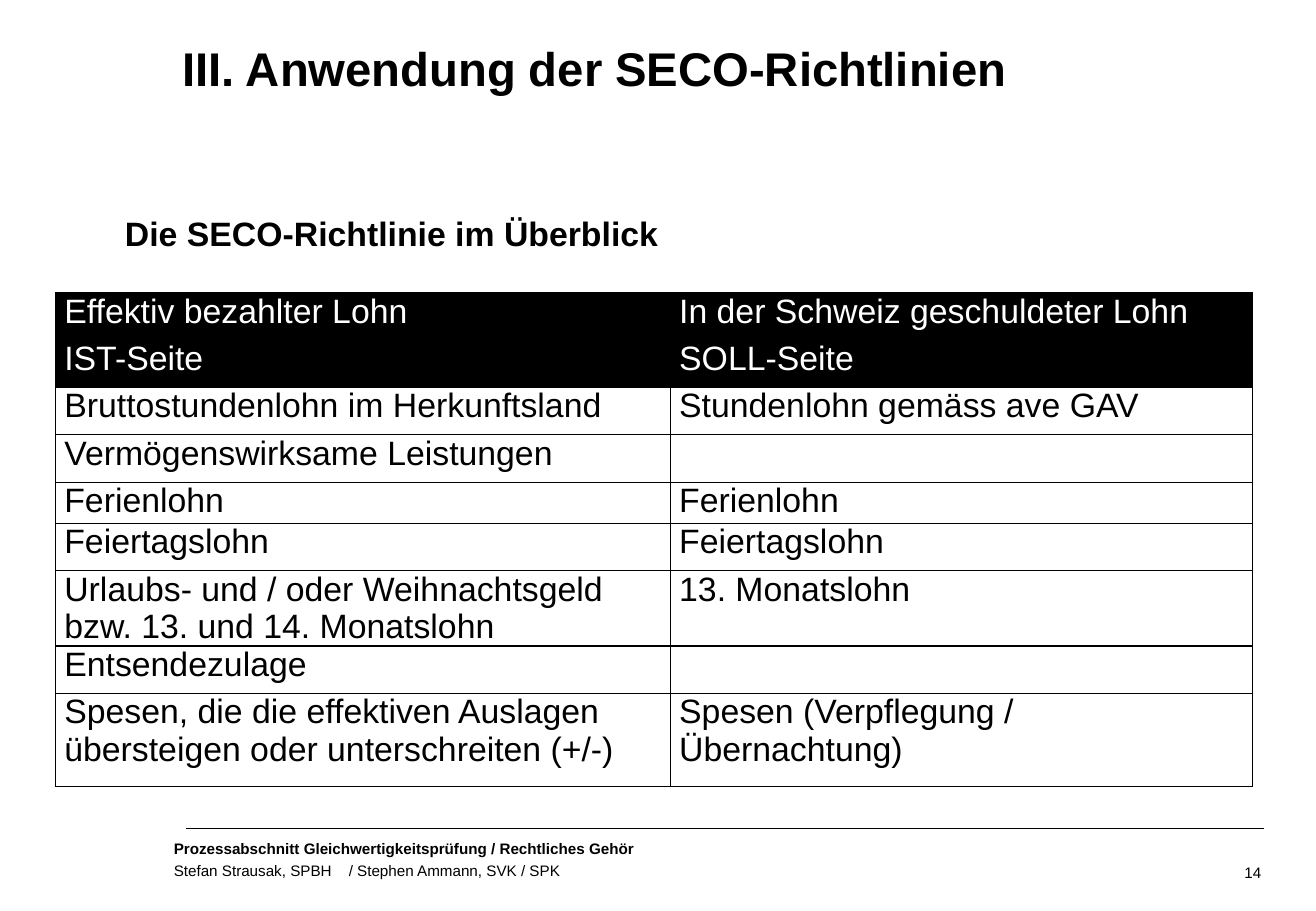
from lxml import etree
from pptx import Presentation
from pptx.dml.color import RGBColor
from pptx.enum.shapes import MSO_CONNECTOR as LINE
from pptx.enum.text import MSO_ANCHOR as ANCHOR, MSO_AUTO_SIZE as AUTO, PP_ALIGN as ALIGN
from pptx.oxml import parse_xml
from pptx.oxml.ns import nsdecls, qn
from pptx.util import Inches, Pt

INK = {"black": "000000", "white": "FFFFFF"}


def write(para, text, size, color="black", bold=False):
    """Put one formatted run into a paragraph."""
    run = para.add_run()
    run.text = text
    look = {"name": "Arial", "size": Pt(size), "bold": bold}
    for key, value in look.items():
        setattr(run.font, key, value)
    run.font.color.rgb = RGBColor.from_string(INK[color])


def setup(shape, left, top, width, height, inset=0.09):
    """Place a text shape and return its frame."""
    shape.left, shape.top = Inches(left), Inches(top)
    shape.width, shape.height = Inches(width), Inches(height)
    frame = shape.text_frame
    look = {
        "word_wrap": True, "auto_size": AUTO.NONE, "vertical_anchor": ANCHOR.TOP,
        "margin_left": Inches(inset), "margin_right": Inches(inset),
        "margin_top": Inches(0.05), "margin_bottom": Inches(0.05),
    }
    for key, value in look.items():
        setattr(frame, key, value)
    return frame


deck = Presentation()
deck.slide_width, deck.slide_height = Inches(10.83), Inches(7.5)
slide = deck.slides.add_slide(deck.slide_layouts[5])
shapes = slide.shapes

# Footer
foot = setup(shapes.add_textbox(0, 0, 0, 0), 1.34, 6.89, 5.34, 0.41)
topic = foot.paragraphs[0]
names = foot.add_paragraph()
names.space_before = Pt(4.5)
topic.line_spacing = names.line_spacing = 0.8
tabs = etree.SubElement(names._p.get_or_add_pPr(), qn("a:tabLst"))
etree.SubElement(tabs, qn("a:tab"), pos=str(Inches(1.44)), algn="l")
write(topic, "Prozessabschnitt Gleichwertigkeitsprüfung / Rechtliches Gehör", 9, bold=True)
write(names, "Stefan Strausak, SPBH\t/ Stephen Ammann, SVK / SPK", 9)

rule = shapes.add_connector(LINE.STRAIGHT, Inches(1.53), Inches(6.82), Inches(10.4), Inches(6.82))
rule.line.color.rgb = RGBColor.from_string(INK["black"])
rule.line.width = Pt(0.75)
etree.SubElement(rule._element.spPr, qn("a:effectLst"))

# Headings
title = setup(shapes.title, 1.41, 0.27, 8.99, 0.73).paragraphs[0]
title.alignment = ALIGN.LEFT
write(title, "III. Anwendung der SECO-Richtlinien", 28, bold=True)

lead = setup(shapes.add_textbox(0, 0, 0, 0), 0.93, 1.7, 9, 5.39, 0.1).paragraphs[0]
write(lead, "Die SECO-Richtlinie im Überblick", 20, bold=True)

number = setup(shapes.add_textbox(0, 0, 0, 0), 7.86, 7.06, 2.64, 0.35, 0.12).paragraphs[0]
number.alignment = ALIGN.RIGHT
write(number, "14", 9)

# Wage comparison: row height, paid wage, owed wage
wages = [
    (0.39, "Effektiv bezahlter Lohn", "In der Schweiz geschuldeter Lohn"),
    (0.39, "IST-Seite", "SOLL-Seite"),
    (0.39, "Bruttostundenlohn im Herkunftsland", "Stundenlohn gemäss ave GAV"),
    (0.39, "Vermögenswirksame Leistungen", ""),
    (0.34, "Ferienlohn", "Ferienlohn"),
    (0.39, "Feiertagslohn", "Feiertagslohn"),
    (0.62, "Urlaubs- und / oder Weihnachtsgeld bzw. 13. und 14. Monatslohn", "13. Monatslohn"),
    (0.39, "Entsendezulage", ""),
    (0.77, "Spesen, die die effektiven Auslagen übersteigen oder unterschreiten (+/-)",
     "Spesen (Verpflegung / Übernachtung)"),
]
heads = 2
height = sum(row[0] for row in wages)
table = shapes.add_table(
    len(wages), 2, Inches(0.46), Inches(2.41), Inches(9.85), Inches(height)).table
table.first_row = table.horz_banding = False
for col, width in zip(table.columns, (5.06, 4.79)):
    col.width = Inches(width)

for r, (tall, *texts) in enumerate(wages):
    table.rows[r].height = Inches(tall)
    for c, text in enumerate(texts):
        cell = table.cell(r, c)
        cell.margin_left = cell.margin_right = Inches(0.07)
        cell.margin_top = cell.margin_bottom = 0
        for side in "LRTB":
            cell._tc.get_or_add_tcPr().append(parse_xml(
                f'<a:ln{side} {nsdecls("a")} w="{Pt(0.75)}"><a:solidFill>'
                f'<a:srgbClr val="{INK["black"]}"/></a:solidFill></a:ln{side}>'))
        para = cell.text_frame.paragraphs[0]
        if r < heads:
            cell.fill.solid()
            cell.fill.fore_color.rgb = RGBColor.from_string(INK["black"])
            para.alignment = ALIGN.JUSTIFY
        else:
            cell.fill.background()
        if text:
            write(para, text, 20, "white" if r < heads else "black")

deck.save("out.pptx")
